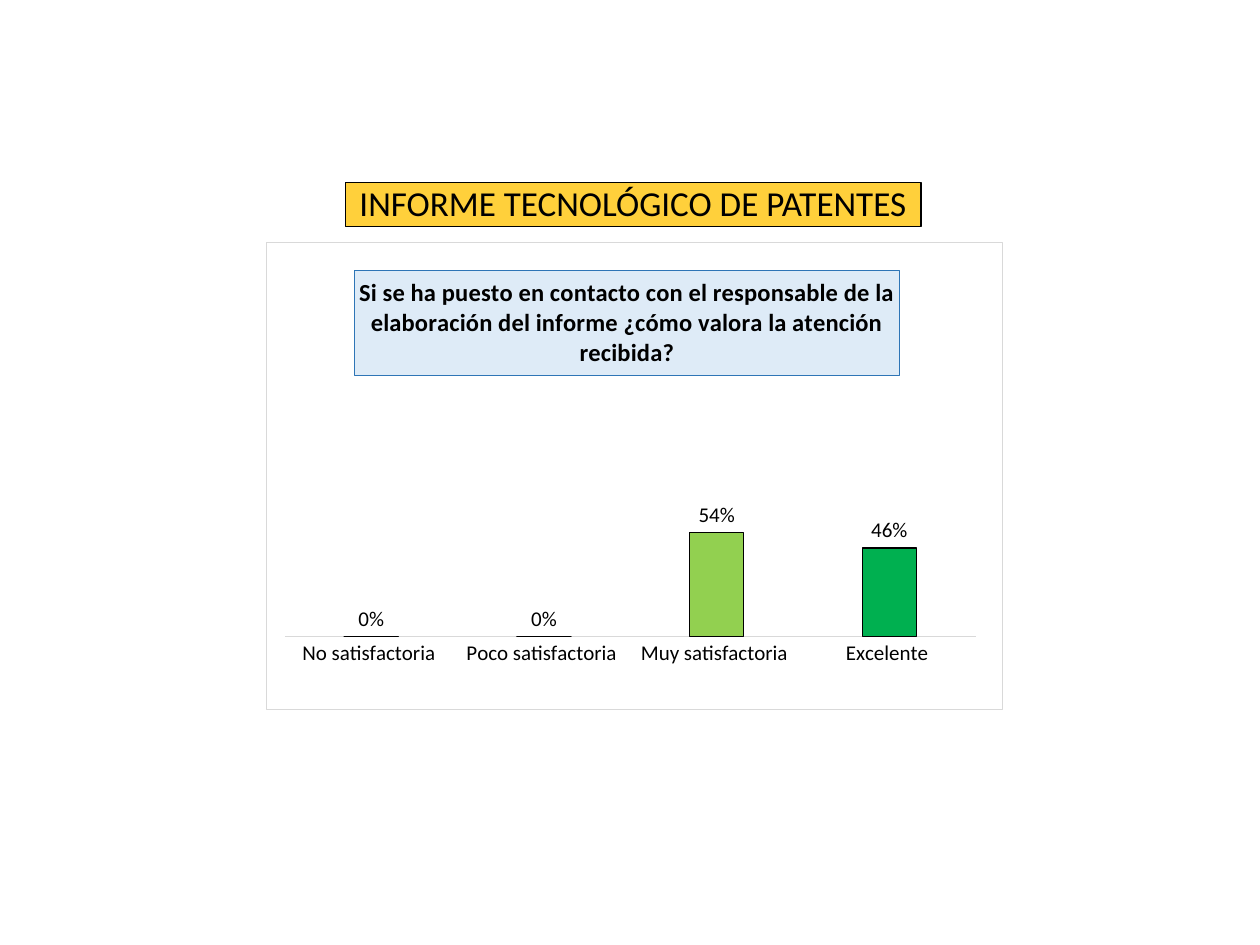
from dataclasses import dataclass

from lxml import etree
from pptx import Presentation
from pptx.chart.data import CategoryChartData
from pptx.dml.color import RGBColor
from pptx.enum import chart as charts, shapes, text
from pptx.oxml import ns
from pptx.util import Pt


@dataclass(frozen=True)
class Theme:
    """Colours, typeface and type sizes of the slide."""
    font: str = "Calibri"
    ink: str = "000000"
    paper: str = "FFFFFF"
    heading_fill: str = "FFD03B"
    question_fill: str = "DEEBF7"
    question_line: str = "2E75B6"
    rule: str = "D9D9D9"
    ratings: tuple = ("C00000", "806000", "92D050", "00B050")
    heading_size: int = 20
    question_size: int = 14
    chart_size: int = 12
    line_width: float = 0.75


THEME = Theme()
HEADING = "INFORME TECNOLÓGICO DE PATENTES"
QUESTION = ("Si se ha puesto en contacto con el responsable de la elaboración "
            "del informe ¿cómo valora la atención recibida?")
ANSWERS = {
    "No satisfactoria ": 0,
    "Poco satisfactoria ": 0,
    "Muy satisfactoria ": 0.54,
    "Excelente ": 0.46,
}


def style_font(font, size, bold=False):
    """Apply the theme typeface and ink at one size."""
    font.name = THEME.font
    font.size = Pt(size)
    font.bold = bold
    font.color.rgb = RGBColor.from_string(THEME.ink)


def paint(part, fill, line):
    """Give a shape or chart part a solid fill and a thin outline."""
    part.fill.solid()
    part.fill.fore_color.rgb = RGBColor.from_string(fill)
    draw_line(part.line, line)


def draw_line(line, color):
    """Set a thin line in one colour."""
    line.color.rgb = RGBColor.from_string(color)
    line.width = Pt(THEME.line_width)


def set_layout(parent, index, **settings):
    """Place a chart part by fractions of the chart area."""
    for old in parent.findall(ns.qn("c:layout")):
        parent.remove(old)
    layout = etree.Element(ns.qn("c:layout"))
    manual = etree.SubElement(layout, ns.qn("c:manualLayout"))
    for tag, value in settings.items():
        etree.SubElement(manual, ns.qn(f"c:{tag}")).set("val", str(value))
    parent.insert(index, layout)


def frame_chart(chart_space):
    """Fill and outline the whole chart area."""
    frame = ns.nsdecls("c", "a")
    width = Pt(THEME.line_width)
    properties = etree.fromstring(
        f'<c:spPr {frame}>'
        f'<a:solidFill><a:srgbClr val="{THEME.paper}"/></a:solidFill>'
        f'<a:ln w="{int(width)}"><a:solidFill><a:srgbClr val="{THEME.rule}"/>'
        f'</a:solidFill></a:ln></c:spPr>')
    chart_space.find(ns.qn("c:chart")).addnext(properties)


def add_heading(slide):
    """Add the yellow heading bar."""
    heading = slide.shapes.add_shape(
        shapes.MSO_SHAPE.RECTANGLE, Pt(197.3), Pt(104.4), Pt(329), Pt(25.2))
    heading.shadow.inherit = False
    paint(heading, THEME.heading_fill, THEME.ink)
    frame = heading.text_frame
    frame.word_wrap = True
    frame.vertical_anchor = text.MSO_ANCHOR.MIDDLE
    frame.margin_top = frame.margin_bottom = Pt(0)
    line = frame.paragraphs[0]
    line.text = HEADING
    line.alignment = text.PP_ALIGN.CENTER
    line.line_spacing = 0.9
    style_font(line.font, THEME.heading_size)


def add_question(chart):
    """Add the survey question as the boxed chart title."""
    chart.has_title = True
    question = chart.chart_title
    line = question.text_frame.paragraphs[0]
    line.text = QUESTION
    line.alignment = text.PP_ALIGN.CENTER
    style_font(line.font, THEME.question_size, bold=True)
    paint(question.format, THEME.question_fill, THEME.question_line)
    title = chart._chartSpace.find(".//" + ns.qn("c:title"))
    set_layout(title, 1, xMode="edge", yMode="edge", x=0.12, y=0.06)


def style_axes(chart):
    """Show only the answer names along a thin baseline."""
    answers, share = chart.category_axis, chart.value_axis
    answers.major_tick_mark = charts.XL_TICK_MARK.NONE
    answers.has_major_gridlines = False
    draw_line(answers.format.line, THEME.rule)
    share.minimum_scale = 0
    share.maximum_scale = 1
    share.major_unit = 0.25
    share.has_major_gridlines = False
    share.tick_labels.number_format = "0.00%"
    share.tick_labels.number_format_is_linked = False
    share.visible = False


def style_bars(plot):
    """Colour each bar by rating and label it with its share."""
    plot.gap_width = 219
    plot.overlap = -27
    plot.vary_by_categories = False
    bars = plot.series[0]
    paint(bars.format, THEME.ratings[-1], THEME.ink)
    for index, color in enumerate(THEME.ratings):
        paint(bars.points[index].format, color, THEME.ink)
    labels = bars.data_labels
    labels.show_value = True
    labels.number_format = "0%"
    labels.number_format_is_linked = False
    labels.position = charts.XL_LABEL_POSITION.OUTSIDE_END
    style_font(labels.font, THEME.chart_size)


def add_ratings(slide):
    """Add the column chart of answers."""
    data = CategoryChartData(number_format="0%")
    data.categories = list(ANSWERS)
    data.add_series("Series 1", list(ANSWERS.values()))
    chart = slide.shapes.add_chart(
        charts.XL_CHART_TYPE.COLUMN_CLUSTERED,
        Pt(151.9), Pt(138.2), Pt(421.2), Pt(267.8), data).chart
    chart.has_legend = False
    style_font(chart.font, THEME.chart_size)
    add_question(chart)
    style_axes(chart)
    style_bars(chart.plots[0])
    frame_chart(chart._chartSpace)
    plot_area = chart._chartSpace.find(".//" + ns.qn("c:plotArea"))
    set_layout(plot_area, 0, layoutTarget="inner", xMode="edge", yMode="edge",
               x=0.025, y=0.432, w=0.939, h=0.411)


def main():
    """Build and save the slide."""
    deck = Presentation()
    deck.slide_width, deck.slide_height = Pt(720), Pt(540)
    slide = deck.slides.add_slide(deck.slide_layouts[6])
    add_heading(slide)
    add_ratings(slide)
    deck.save("out.pptx")


if __name__ == "__main__":
    main()
